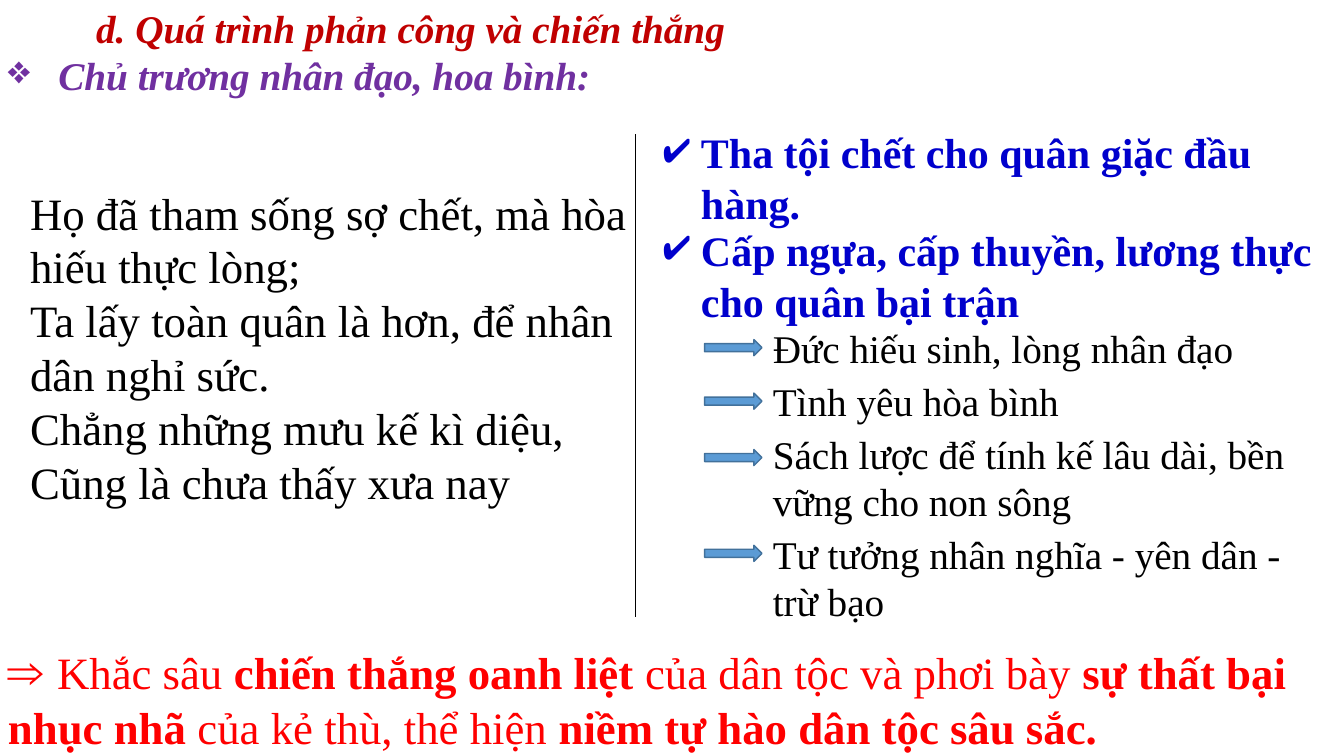
from lxml import etree
from pptx import Presentation
from pptx.dml.color import RGBColor
from pptx.enum.shapes import MSO_CONNECTOR as CONN, MSO_SHAPE as SHAPE
from pptx.enum.text import MSO_AUTO_SIZE as AUTO
from pptx.oxml.ns import qn
from pptx.util import Pt

FONT = "Times New Roman"
BLACK = RGBColor(0x00, 0x00, 0x00)
RED = RGBColor(0xFF, 0x00, 0x00)
DARK_RED = RGBColor(0xC0, 0x00, 0x00)
PURPLE = RGBColor(0x70, 0x30, 0xA0)
BLUE = RGBColor(0x00, 0x00, 0xCC)
ARROW_FILL = RGBColor(0x5B, 0x9B, 0xD5)
ARROW_LINE = RGBColor(0x42, 0x71, 0x9B)

POEM = [
    "Họ đã tham sống sợ chết, mà hòa hiếu thực lòng;",
    "Ta lấy toàn quân là hơn, để nhân dân nghỉ sức.",
    "Chẳng những mưu kế kì diệu,",
    "Cũng là chưa thấy xưa nay",
]
POLICIES = [
    (87.1, 492.5, "Tha tội chết cho quân giặc đầu hàng."),
    (157, 479.5, "Cấp ngựa, cấp thuyền, lương thực cho quân bại trận"),
]
MEANINGS = [
    (242.6, 228.2, 41, "Đức hiếu sinh, lòng nhân đạo"),
    (280.8, 265.9, 41, "Tình yêu hòa bình"),
    (321.1, 304, 75, "Sách lược để tính kế lâu dài, bền vững cho non sông"),
    (389.5, 375.2, 75, "Tư tưởng nhân nghĩa - yên dân - trừ bạo"),
]
CONCLUSION = [
    ("⇒ ", 36, True),
    ("Khắc sâu", 32, False),
    (" chiến thắng oanh liệt ", 32, True),
    ("của dân tộc và phơi bày", 32, False),
    (" sự thất bại nhục nhã ", 32, True),
    ("của kẻ thù, thể hiện", 32, False),
    (" niềm tự hào dân tộc sâu sắc.", 32, True),
]


def style(r, size, color, bold=False, italic=False):
    r.font.name = FONT
    r.font.size = Pt(size)
    r.font.color.rgb = color
    r.font.bold = bold
    r.font.italic = italic


def add_text(s, left, top, width, height, lines, size, color, bold=False, italic=False):
    tf = s.shapes.add_textbox(Pt(left), Pt(top), Pt(width), Pt(height)).text_frame
    tf.word_wrap = True
    tf.auto_size = AUTO.SHAPE_TO_FIT_TEXT
    tf.text = "\n".join(lines)
    for p in tf.paragraphs:
        for r in p.runs:
            style(r, size, color, bold, italic)
    return tf


def set_indent(p, margin, first=0):
    pPr = p._p.get_or_add_pPr()
    pPr.set("marL", str(Pt(margin)))
    pPr.set("indent", str(Pt(first)))
    return pPr


def set_bullet(p, char, color, hang):
    pPr = set_indent(p, hang, -hang)
    bu_color = etree.SubElement(pPr, qn("a:buClr"))
    etree.SubElement(bu_color, qn("a:srgbClr")).set("val", str(color))
    etree.SubElement(pPr, qn("a:buChar")).set("char", char)


def add_divider(s, x, top, bottom):
    line = s.shapes.add_connector(CONN.STRAIGHT, Pt(x), Pt(top), Pt(x), Pt(bottom))
    line.line.color.rgb = BLACK
    line.line.width = Pt(0.75)
    etree.SubElement(line._element.spPr, qn("a:effectLst"))


def add_arrow(s, top):
    sp = s.shapes.add_shape(SHAPE.RIGHT_ARROW, Pt(503.3), Pt(top), Pt(41), Pt(11.5))
    sp.shadow.inherit = False
    sp.fill.solid()
    sp.fill.fore_color.rgb = ARROW_FILL
    sp.line.color.rgb = ARROW_LINE
    sp.line.width = Pt(1)


def add_heading(s):
    lines = ["d. Quá trình phản công và chiến thắng", "Chủ trương nhân đạo, hoa bình:"]
    tf = add_text(s, -1.4, -0.7, 961, 75, lines, 28, DARK_RED, True, True)
    title, subtitle = tf.paragraphs
    set_indent(title, 63)
    set_bullet(subtitle, "❖", PURPLE, 36)
    subtitle.runs[0].font.color.rgb = PURPLE


def add_conclusion(s):
    tf = add_text(s, -1.4, 452.9, 962, 90, [], 32, RED)
    for text, size, bold in CONCLUSION:
        r = tf.paragraphs[0].add_run()
        r.text = text
        style(r, size, RED, bold)


def main():
    prs = Presentation()
    prs.slide_width, prs.slide_height = Pt(960), Pt(540)
    s = prs.slides.add_slide(prs.slide_layouts[6])
    add_divider(s, 453.6, 95.8, 440.6)
    for top, width, text in POLICIES:
        tf = add_text(s, 466.6, top, width, 80, [text], 30, BLUE, True)
        set_bullet(tf.paragraphs[0], "✔", BLUE, 27)
    add_conclusion(s)
    for arrow_top, text_top, height, text in MEANINGS:
        add_arrow(s, arrow_top)
        add_text(s, 545, text_top, 388, height, [text], 28, BLACK)
    add_text(s, 14.4, 128.9, 443, 240, POEM, 32, BLACK)
    add_heading(s)
    prs.save("out.pptx")


if __name__ == "__main__":
    main()
